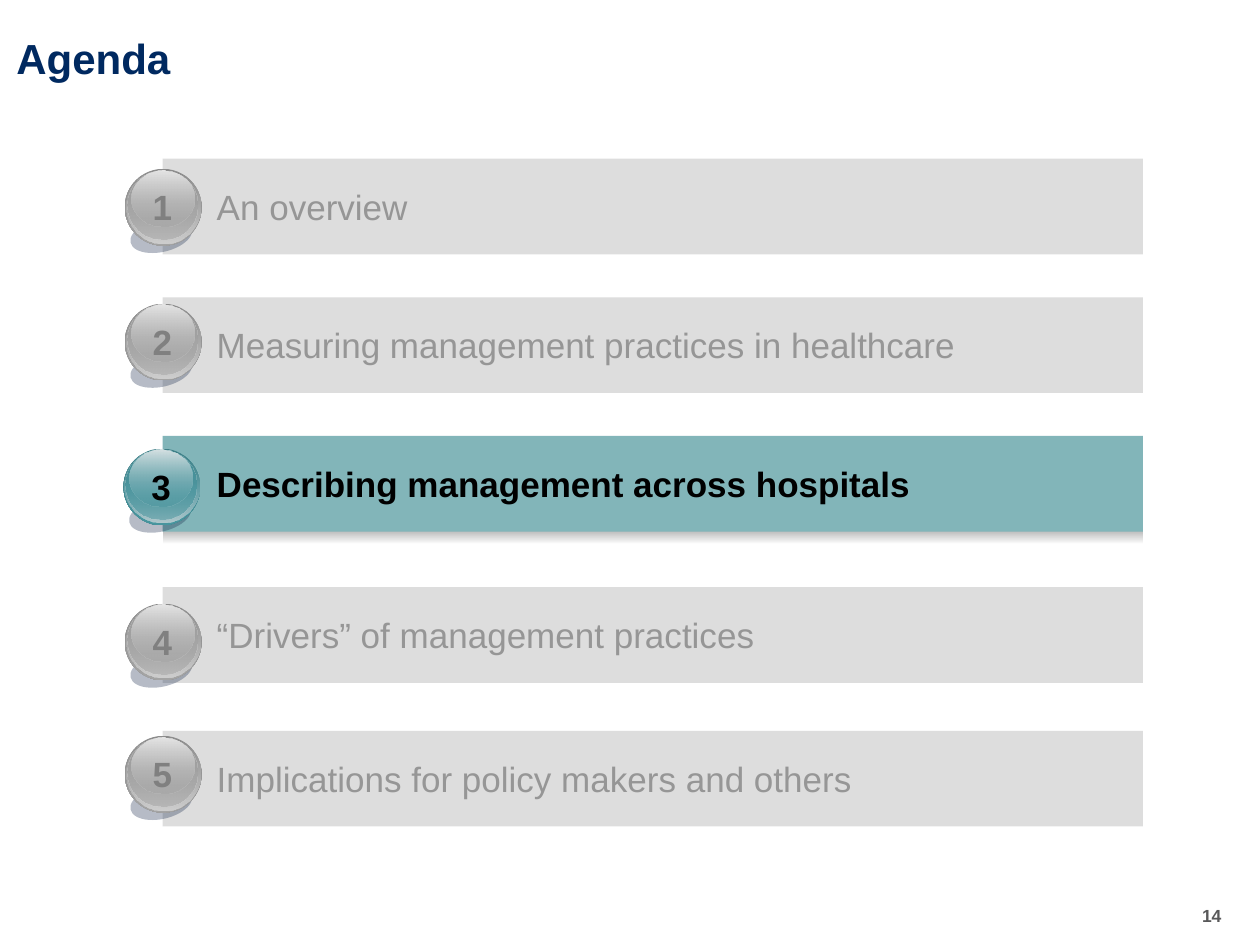
"""Build an agenda slide whose third item is highlighted."""
from dataclasses import dataclass
from typing import Optional

from lxml import etree
from pptx import Presentation
from pptx.dml.color import RGBColor
from pptx.enum.shapes import MSO_SHAPE
from pptx.enum.text import MSO_ANCHOR, MSO_AUTO_SIZE, PP_ALIGN
from pptx.oxml.ns import qn
from pptx.shapes.autoshape import Shape
from pptx.shapes.group import GroupShape
from pptx.text.text import TextFrame
from pptx.util import Inches, Pt

RECT, OVAL = MSO_SHAPE.RECTANGLE, MSO_SHAPE.OVAL
TOP, MIDDLE = MSO_ANCHOR.TOP, MSO_ANCHOR.MIDDLE
LEFT, CENTER = PP_ALIGN.LEFT, PP_ALIGN.CENTER
NO_AUTOSIZE = MSO_AUTO_SIZE.NONE

FONT = "Arial"
COLORS = {
    "title": "002960",
    "page": "59595A",
    "ball_shadow": "0F2145",
    "bar_shadow": "A4A4A4",
    "white": "FFFFFF",
}
BAR_LEFT, BAR_WIDTH, BAR_HEIGHT = 1.29, 7.78, 0.76


@dataclass(frozen=True)
class Stop:
    color: str
    alpha: int = 100


@dataclass(frozen=True)
class Theme:
    bar: str
    label: str
    number: str
    rim: str
    base: str
    glow: str
    inner: str
    shine: str
    bold: bool = False


@dataclass(frozen=True)
class Item:
    label: str
    bar_top: float
    ball_top: float
    theme: Theme
    ball_left: float = 0.99


@dataclass(frozen=True)
class Layer:
    dx: float
    dy: float
    width: float
    height: float
    start: Stop
    end: Stop


MUTED = Theme("DDDDDD", "969696", "808080", "8C8C8C", "A4A4A4", "CECECE", "A1A1A1", "E5E5E5")
ACTIVE = Theme("82B5B9", "000000", "000000", "3E7F87", "48959E", "B1C8CC", "47929B", "D6E1E3", True)

ITEMS = [
    Item("An overview", 1.26, 1.34, MUTED),
    Item("Measuring management practices in healthcare", 2.36, 2.41, MUTED),
    Item("Describing management across hospitals", 3.46, 3.56, ACTIVE, 0.98),
    Item("“Drivers” of management practices", 4.66, 4.79, MUTED),
    Item("Implications for policy makers and others", 5.8, 5.84, MUTED),
]


def set_alpha(color: etree._Element, percent: int) -> None:
    """Give a colour element an opacity in percent."""
    etree.SubElement(color, qn("a:alpha")).set("val", str(percent * 1000))


def add_run(tf: TextFrame, text: str, size: int, color: str, bold: bool, align: PP_ALIGN = LEFT) -> None:
    """Add one formatted run to the first paragraph."""
    p = tf.paragraphs[0]
    p.alignment = align
    r = p.add_run()
    r.text = text
    r.font.name, r.font.size, r.font.bold = FONT, Pt(size), bold
    r.font.color.rgb = RGBColor.from_string(color)


def set_frame(tf: TextFrame, wrap: bool, margin: float = 0, anchor: MSO_ANCHOR = TOP) -> None:
    """Set the margins, wrapping and anchor of a text frame."""
    tf.margin_left = tf.margin_right = tf.margin_top = tf.margin_bottom = Inches(margin)
    tf.word_wrap, tf.vertical_anchor, tf.auto_size = wrap, anchor, NO_AUTOSIZE


def add_plain(group: GroupShape, kind: MSO_SHAPE, x: float, y: float, w: float, h: float,
              color: Optional[str] = None) -> Shape:
    """Add a shape without line or shadow, filled if a colour is given."""
    sp = group.shapes.add_shape(kind, Inches(x), Inches(y), Inches(w), Inches(h))
    sp.shadow.inherit = False
    sp.line.fill.background()
    if color:
        sp.fill.solid()
        sp.fill.fore_color.rgb = RGBColor.from_string(color)
    else:
        sp.fill.background()
    return sp


def set_gradient(sp: Shape, start: Stop, end: Stop) -> None:
    """Fill a shape from top to bottom with two stops."""
    sp.fill.gradient()
    sp.fill.gradient_angle = 270
    for stop, target in zip((start, end), sp.fill.gradient_stops):
        target.color.rgb = RGBColor.from_string(stop.color)
    for stop, color in zip((start, end), sp._element.spPr.iter(qn("a:srgbClr"))):
        if stop.alpha < 100:
            set_alpha(color, stop.alpha)


def add_ball(group: GroupShape, item: Item, number: int) -> None:
    """Draw the glossy numbered ball of an item."""
    x, y, t = item.ball_left, item.ball_top, item.theme
    shadow = add_plain(group, OVAL, x + 0.04, y + 0.4, 0.5, 0.26, COLORS["ball_shadow"])
    shadow.rotation = 347.1
    set_alpha(shadow._element.spPr.find(".//" + qn("a:srgbClr")), 30)
    layers = [
        Layer(0, 0, 0.61, 0.61, Stop(t.rim), Stop(t.base)),
        Layer(0.01, 0, 0.59, 0.59, Stop(t.base, 0), Stop(t.glow)),
        Layer(0.02, 0.01, 0.56, 0.55, Stop(t.inner), Stop(t.base, 48)),
        Layer(0.05, 0.01, 0.5, 0.45, Stop(t.shine), Stop(t.base, 38)),
    ]
    for layer in layers:
        sp = add_plain(group, OVAL, x + layer.dx, y + layer.dy, layer.width, layer.height)
        set_gradient(sp, layer.start, layer.end)
    sp = add_plain(group, OVAL, x + 0.19, y + 0.19, 0.22, 0.22)
    set_frame(sp.text_frame, False, 0.08, MIDDLE)
    add_run(sp.text_frame, str(number), 20, t.number, True, CENTER)


def add_item(group: GroupShape, item: Item, number: int) -> None:
    """Draw the bar, label and ball of an agenda item."""
    t = item.theme
    if t is ACTIVE:
        sp = add_plain(group, RECT, BAR_LEFT, item.bar_top + 0.72, BAR_WIDTH, 0.14)
        set_gradient(sp, Stop(COLORS["bar_shadow"]), Stop(COLORS["white"]))
    add_plain(group, RECT, BAR_LEFT, item.bar_top, BAR_WIDTH, BAR_HEIGHT, t.bar)
    sp = group.shapes.add_textbox(Inches(1.72), Inches(item.bar_top + 0.21), Inches(7.09), Inches(0.34))
    set_frame(sp.text_frame, True)
    add_run(sp.text_frame, item.label, 20, t.label, t.bold)
    add_ball(group, item, number)


def main() -> None:
    """Build and save the slide."""
    prs = Presentation()
    prs.slide_width, prs.slide_height = Inches(10), Inches(7.5)
    s = prs.slides.add_slide(prs.slide_layouts[5])
    title = s.shapes.title
    title.left, title.top, title.width, title.height = Inches(0.13), Inches(0.26), Inches(9.62), Inches(0.41)
    set_frame(title.text_frame, True)
    add_run(title.text_frame, "Agenda", 24, COLORS["title"], True)
    for number, item in enumerate(ITEMS, 1):
        add_item(s.shapes.add_group_shape(), item, number)
    page = s.shapes.add_textbox(Inches(9.54), Inches(7.18), Inches(0.22), Inches(0.17))
    set_frame(page.text_frame, False)
    add_run(page.text_frame, "14", 10, COLORS["page"], True)
    prs.save("out.pptx")


if __name__ == "__main__":
    main()
